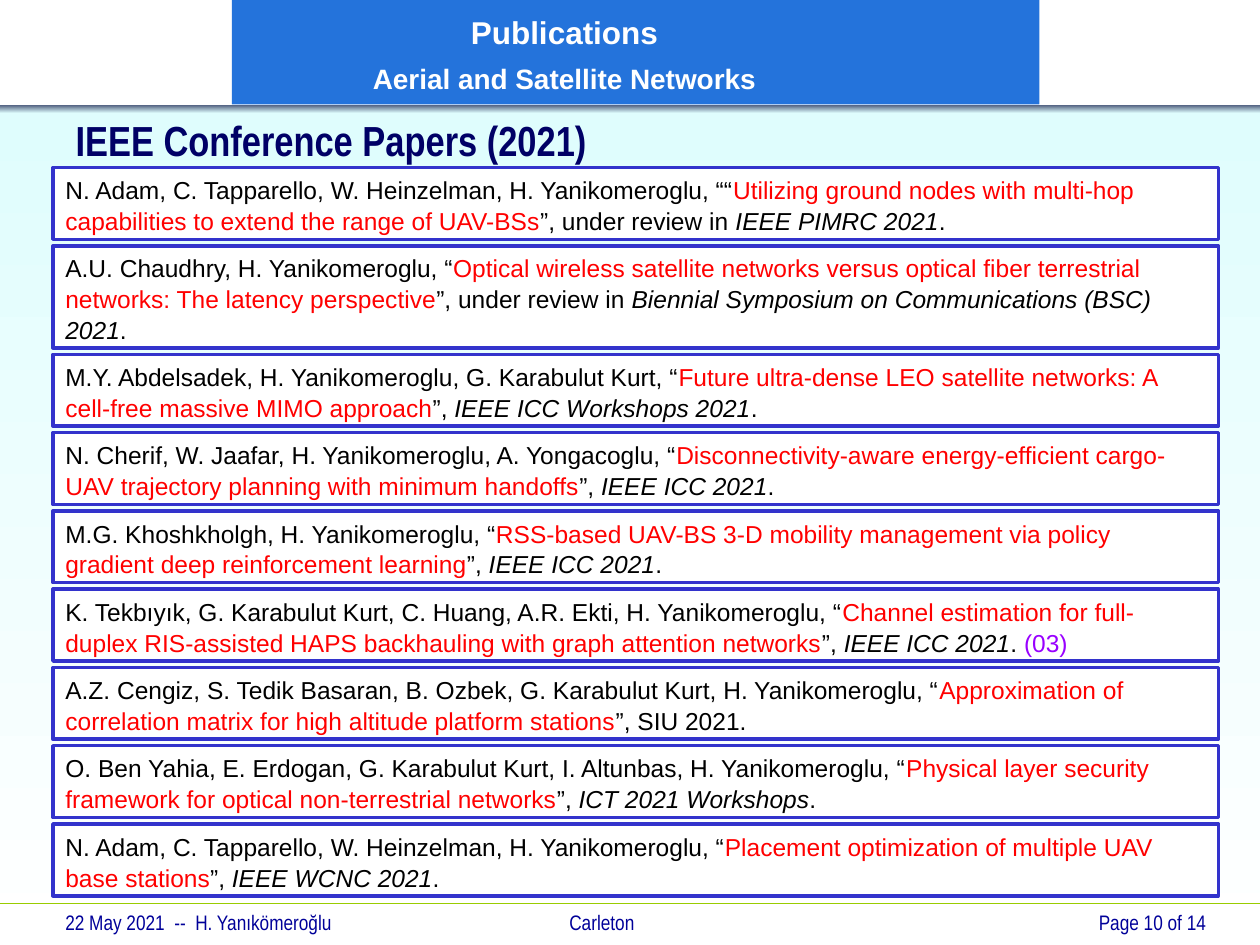
from pptx import Presentation
from pptx.dml.color import RGBColor
from pptx.enum.shapes import MSO_CONNECTOR, MSO_SHAPE
from pptx.enum.text import MSO_ANCHOR, PP_ALIGN
from pptx.util import Inches, Pt
from lxml import etree

RECTANGLE = MSO_SHAPE.RECTANGLE
STRAIGHT = MSO_CONNECTOR.STRAIGHT
MIDDLE, TOP = MSO_ANCHOR.MIDDLE, MSO_ANCHOR.TOP
LEFT, CENTER, RIGHT = PP_ALIGN.LEFT, PP_ALIGN.CENTER, PP_ALIGN.RIGHT

# Content
TITLE = "IEEE Conference Papers (2021)"
HEADINGS = [("Publications", 18), ("Aerial and Satellite Networks", 16)]
FOOTERS = [  # text, left, width, alignment
    ("22 May 2021  --  H. Yanıkömeroğlu", 0.42, 3.5, LEFT),
    ("Carleton", 4.42, 2.25, LEFT),
    ("Page 10 of 14", 7.5, 2.17, RIGHT),
]
# authors, paper title, link text, venue, ending, note, number of lines
PAPERS = [
    ("N. Adam, C. Tapparello, W. Heinzelman, H. Yanikomeroglu, ““",
     "Utilizing ground nodes with multi-hop capabilities to extend the range of UAV-BSs",
     "”, under review in ", "IEEE PIMRC 2021", ".", "", 2),
    ("A.U. Chaudhry, H. Yanikomeroglu, “",
     "Optical wireless satellite networks versus optical fiber terrestrial networks: "
     "The latency perspective",
     "”, under review in ", "Biennial Symposium on Communications (BSC) 2021", ".", "", 3),
    ("M.Y. Abdelsadek, H. Yanikomeroglu, G. Karabulut Kurt, “",
     "Future ultra-dense LEO satellite networks: A cell-free massive MIMO approach",
     "”, ", "IEEE ICC Workshops 2021", ".", "", 2),
    ("N. Cherif, W. Jaafar, H. Yanikomeroglu, A. Yongacoglu, “",
     "Disconnectivity-aware energy-efficient cargo-UAV trajectory planning "
     "with minimum handoffs",
     "”, ", "IEEE ICC 2021", ".", "", 2),
    ("M.G. Khoshkholgh, H. Yanikomeroglu, “",
     "RSS-based UAV-BS 3-D mobility management via policy gradient deep "
     "reinforcement learning",
     "”, ", "IEEE ICC 2021", ".", "", 2),
    ("K. Tekbıyık, G. Karabulut Kurt, C. Huang, A.R. Ekti, H. Yanikomeroglu, “",
     "Channel estimation for full-duplex RIS-assisted HAPS backhauling with graph "
     "attention networks",
     "”, ", "IEEE ICC 2021", ". ", "(03)", 2),
    ("A.Z. Cengiz, S. Tedik Basaran, B. Ozbek, G. Karabulut Kurt, H. Yanikomeroglu, “",
     "Approximation of correlation matrix for high altitude platform stations",
     "”, SIU 2021.", "", "", "", 2),
    ("O. Ben Yahia, E. Erdogan, G. Karabulut Kurt, I. Altunbas, H. Yanikomeroglu, “",
     "Physical layer security framework for optical non-terrestrial networks",
     "”, ", "ICT 2021 Workshops", ".", "", 2),
    ("N. Adam, C. Tapparello, W. Heinzelman, H. Yanikomeroglu, “",
     "Placement optimization of multiple UAV base stations",
     "”, ", "IEEE WCNC 2021", ".", "", 2),
]
RUN_COLORS = ["000000", "FF0000", "000000", "000000", "000000", "9900FF"]
VENUE = 3  # index of the italic run
BOX_HEIGHTS = {2: 0.57, 3: 0.81}
FIRST_TOP, LAST_BOTTOM = 1.33, 7.11


def rgb(value):
    return RGBColor.from_string(value)


def set_font(font, name, size, color, bold=False):
    font.name, font.size, font.bold = name, Pt(size), bold
    font.color.rgb = rgb(color)


def add_rectangle(slide, left, top, width, height, fill, line=None):
    """A tuple as fill is a gradient running from top to bottom."""
    shape = slide.shapes.add_shape(
        RECTANGLE, Inches(left), Inches(top), Inches(width), Inches(height))
    shape.shadow.inherit = False
    if isinstance(fill, tuple):
        shape.fill.gradient()
        shape.fill.gradient_angle = 270
        for stop, position, color in zip(shape.fill.gradient_stops, (0, 1), fill):
            stop.position = position
            stop.color.rgb = rgb(color)
    else:
        shape.fill.solid()
        shape.fill.fore_color.rgb = rgb(fill)
    if line:
        shape.line.color.rgb = rgb(line)
        shape.line.width = Pt(2)
    else:
        shape.line.fill.background()
    return shape


def add_header(slide):
    header = add_rectangle(slide, 1.84, 0, 6.41, 0.83, "2473DB")
    frame = header.text_frame
    frame.vertical_anchor = MIDDLE
    frame.margin_left, frame.margin_right = 0, Inches(1.13)
    for index, (text, size) in enumerate(HEADINGS):
        paragraph = frame.add_paragraph() if index else frame.paragraphs[0]
        paragraph.text = text
        paragraph.alignment = CENTER
        paragraph.line_spacing = 1.1
        if index:
            paragraph.space_before = Pt(4)
        set_font(paragraph.font, "Arial", size, "FFFFFF", bold=True)


def add_footer(slide):
    rule = slide.shapes.add_connector(
        STRAIGHT, 0, Inches(7.17), Inches(10), Inches(7.17))
    rule.line.color.rgb = rgb("99CC00")
    rule.line.width = Pt(0.75)
    namespace = "{http://schemas.openxmlformats.org/drawingml/2006/main}"
    etree.SubElement(rule._element.spPr, namespace + "effectLst")
    for text, left, width, alignment in FOOTERS:
        box = slide.shapes.add_textbox(
            Inches(left), Inches(7.17), Inches(width), Inches(0.3))
        box.text_frame.word_wrap = True
        paragraph = box.text_frame.paragraphs[0]
        paragraph.text = text
        paragraph.alignment = alignment
        set_font(paragraph.font, "Arial Narrow", 12, "000099")


def add_title(slide):
    title = slide.shapes.title
    title.left, title.top = Inches(0.5), Inches(0.9)
    title.width, title.height = Inches(8.58), Inches(0.42)
    title.text_frame.vertical_anchor = MIDDLE
    paragraph = title.text_frame.paragraphs[0]
    paragraph.text = TITLE
    paragraph.alignment = LEFT
    set_font(paragraph.font, "Arial Narrow", 24, "000066", bold=True)
    # Bring the title in front of the background band
    slide.shapes._spTree.append(title._element)


def add_papers(slide):
    heights = [BOX_HEIGHTS[paper[-1]] for paper in PAPERS]
    gap = (LAST_BOTTOM - FIRST_TOP - sum(heights)) / (len(PAPERS) - 1)
    top = FIRST_TOP
    for (*texts, _), height in zip(PAPERS, heights):
        box = add_rectangle(slide, 0.42, top, 9.25, height, "FFFFFF", "3333CC")
        box.text_frame.vertical_anchor = TOP
        box.text_frame.word_wrap = True
        paragraph = box.text_frame.paragraphs[0]
        paragraph.alignment = LEFT
        paragraph.line_spacing = 1.05
        paragraph.font.name, paragraph.font.size = "Arial", Pt(14)
        for index, (text, color) in enumerate(zip(texts, RUN_COLORS)):
            if text:
                run = paragraph.add_run()
                run.text = text
                run.font.color.rgb = rgb(color)
                run.font.italic = index == VENUE
        top += height + gap


def main():
    presentation = Presentation()
    presentation.slide_width, presentation.slide_height = Inches(10), Inches(7.5)
    slide = presentation.slides.add_slide(presentation.slide_layouts[5])
    # Background band and the shadow strip under the header
    add_rectangle(slide, 0, 0.86, 10, 6.64, ("DFFDFD", "FFFFFF"))
    add_footer(slide)
    add_rectangle(slide, 0, 0.83, 10, 0.07, ("475577", "DFFDFD"))
    add_header(slide)
    add_title(slide)
    add_papers(slide)
    presentation.save("out.pptx")


if __name__ == "__main__":
    main()
